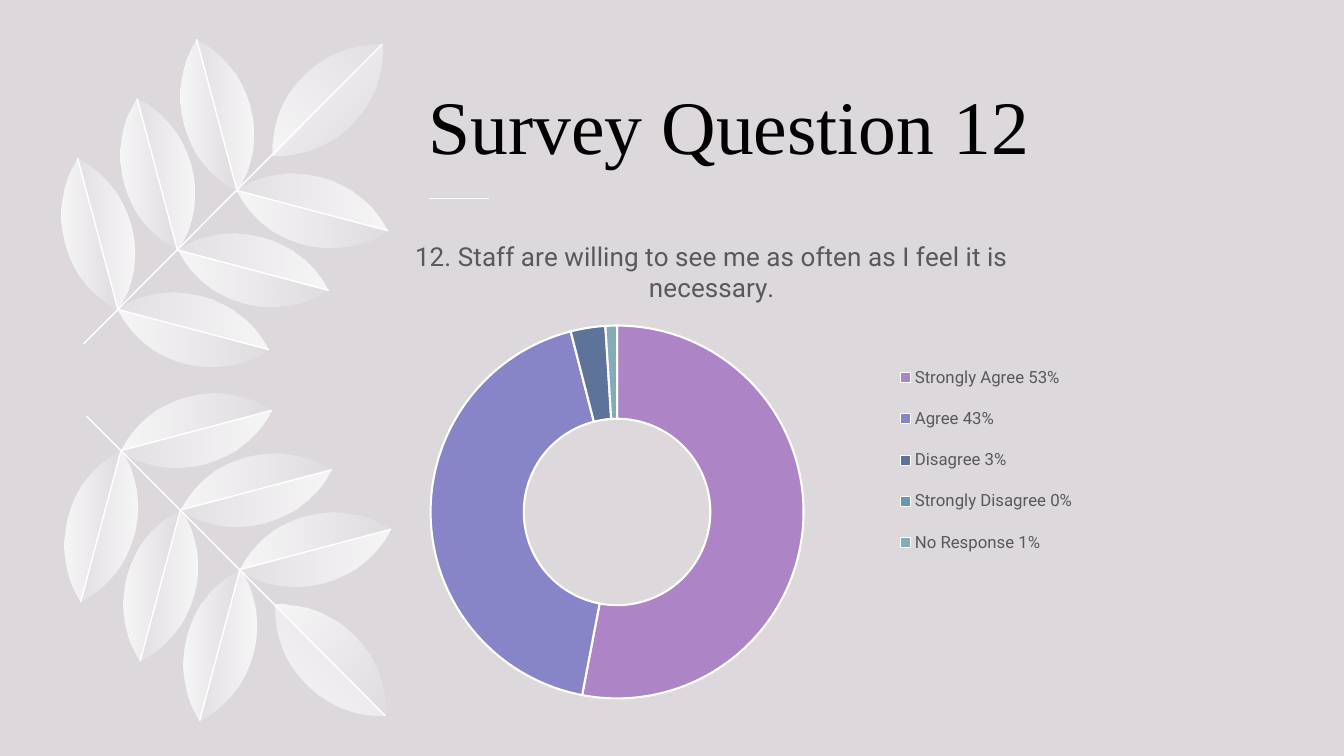
import dataclasses
import math
import typing

import lxml.etree
import pptx
import pptx.chart.data
import pptx.dml.color
import pptx.enum.chart
import pptx.enum.shapes
import pptx.enum.text
import pptx.oxml
import pptx.oxml.ns
import pptx.util

Point = tuple[float, float]
Inches = pptx.util.Inches

COLORS = {"back": "DCD8DC", "white": "FFFFFF", "title": "000000", "text": "595959"}
QUERY = "12. Staff are willing to see me as often as I feel it is necessary."


@dataclasses.dataclass
class Leaf:
    base: Point
    tip: Point
    solid: int  # side of the rib that fades most: 1 or -1
    angles: tuple[int, int]  # gradient angles of that side and the other


@dataclasses.dataclass
class Branch:
    turn: int  # rotation of the leaf shapes
    place: typing.Callable[[Point], Point]


@dataclasses.dataclass
class Slice:
    label: str
    value: int
    color: str


@dataclasses.dataclass
class Frame:
    x: float
    y: float
    w: float = 0
    h: float = 0


NODES = [(2.35 - 0.59 * i, 1.89 + 0.59 * i) for i in range(3)]
LEAVES = [Leaf((2.7, 1.54), (3.79, 0.44), 1, (45, 315))]
for x, y in NODES:
    LEAVES.append(Leaf((x, y), (x - 0.4, y - 1.5), -1, (0, 180)))
    LEAVES.append(Leaf((x, y), (x + 1.5, y + 0.4), 1, (0, 180)))
STEM = ((0.83, 3.41), (3.79, 0.44))
BRANCHES = [
    Branch(45, lambda p: p),
    Branch(-45, lambda p: (p[0] + 0.03, 7.54 - p[1])),
]
# Bezier points of half a leaf: distance along the rib and away from it
CURVE = [(0, 0), (0.19, 0.21), (0.46, 0.34), (0.77, 0.34), (1.08, 0.34),
         (1.36, 0.21), (1.55, 0), (0, 0), (0, 0), (0, 0)]
SLICES = [
    Slice("Strongly Agree 53%", 53, "AD84C6"),
    Slice("Agree 43%", 43, "8784C7"),
    Slice("Disagree 3%", 3, "5D739A"),
    Slice("Strongly Disagree 0%", 0, "6997AF"),
    Slice("No Response 1%", 1, "84ACB6"),
]
CHART = Frame(2.89, 2.18, 8.36, 4.88)


def rgb(code: str) -> pptx.dml.color.RGBColor:
    return pptx.dml.color.RGBColor.from_string(code)


def style(font, name: str, size: float, color: str) -> None:
    font.name, font.size, font.bold = name, pptx.util.Pt(size), False
    font.color.rgb = rgb(COLORS[color])


def rule(shapes, start: Point, end: Point) -> None:
    line = shapes.add_connector(
        pptx.enum.shapes.MSO_CONNECTOR.STRAIGHT, *map(Inches, start + end))
    line.line.color.rgb = rgb(COLORS["white"])
    line.line.width = pptx.util.Pt(1)
    props = line.element.spPr
    lxml.etree.SubElement(props, pptx.oxml.ns.qn("a:effectLst"))


def rotate(p: Point, turn: float) -> Point:
    c, s = math.cos(math.radians(turn)), math.sin(math.radians(turn))
    return p[0] * c - p[1] * s, p[0] * s + p[1] * c


def edge(leaf: Leaf, side: int) -> list[Point]:
    (x, y), (tx, ty) = leaf.base, leaf.tip
    size = math.dist(leaf.base, leaf.tip)
    ux, uy = (tx - x) / size, (ty - y) / size
    return [(x + a * ux - side * b * uy, y + a * uy + side * b * ux)
            for a, b in CURVE]


def bend(shape) -> None:
    # Join each three line ends into one Bezier curve
    lines = shape.element.xpath(".//a:lnTo")
    for i in range(0, len(lines), 3):
        curve = lxml.etree.Element(pptx.oxml.ns.qn("a:cubicBezTo"))
        lines[i].addprevious(curve)
        for line in lines[i:i + 3]:
            curve.append(line[0])
            line.getparent().remove(line)


def blade(shapes, points: list[Point], turn: int, angle: int, fade: int) -> None:
    # Lay the outline flat, then let the shape's rotation restore it
    flat = [rotate(p, -turn) for p in points]
    xs, ys = zip(*flat)
    mid = ((min(xs) + max(xs)) / 2, (min(ys) + max(ys)) / 2)
    goal = rotate(mid, turn)
    spots = [(Inches(x + goal[0] - mid[0]), Inches(y + goal[1] - mid[1]))
             for x, y in flat]
    form = shapes.build_freeform(*spots[0])
    form.add_line_segments(spots[1:], close=True)
    shape = form.convert_to_shape()
    bend(shape)
    shape.rotation = turn
    shape.line.fill.background()
    shape.shadow.inherit = False
    stops = "".join(
        f'<a:gs pos="{pos}"><a:srgbClr val="{COLORS["white"]}">'
        f'<a:alpha val="{alpha}000"/></a:srgbClr></a:gs>'
        for pos, alpha in ((0, 80), (100000, fade)))
    fill = pptx.oxml.parse_xml(
        f'<a:gradFill {pptx.oxml.ns.nsdecls("a")} rotWithShape="0">'
        f'<a:gsLst>{stops}</a:gsLst><a:lin ang="{angle * 60000}" scaled="0"/>'
        '</a:gradFill>')
    shape.element.spPr.insert(2, fill)


def grow(slide, branch: Branch) -> None:
    shapes = slide.shapes.add_group_shape().shapes
    for leaf in LEAVES:
        for side, angle, fade in zip((1, -1), leaf.angles, (10, 20)):
            points = map(branch.place, edge(leaf, side * leaf.solid))
            blade(shapes, list(points), branch.turn, angle, fade)
    for start, end in [STEM] + [(leaf.base, leaf.tip) for leaf in LEAVES[1:]]:
        rule(shapes, branch.place(start), branch.place(end))


def arrange(part, index: int, frame: Frame, inner: bool = False) -> None:
    for old in part.xpath("./c:layout"):
        part.remove(old)
    shares = {"x": (frame.x - CHART.x) / CHART.w, "y": (frame.y - CHART.y) / CHART.h,
              "w": frame.w / CHART.w, "h": frame.h / CHART.h}
    tags = '<c:layoutTarget val="inner"/>' if inner else ""
    tags += '<c:xMode val="edge"/><c:yMode val="edge"/>'
    tags += "".join(f'<c:{k} val="{v:.4f}"/>' for k, v in shares.items() if v)
    part.insert(index, pptx.oxml.parse_xml(
        f'<c:layout {pptx.oxml.ns.nsdecls("c")}>'
        f'<c:manualLayout>{tags}</c:manualLayout></c:layout>'))


def plot(slide) -> None:
    data = pptx.chart.data.CategoryChartData()
    data.categories = [s.label for s in SLICES]
    data.add_series(QUERY, [s.value for s in SLICES])
    chart = slide.shapes.add_chart(
        pptx.enum.chart.XL_CHART_TYPE.DOUGHNUT,
        *map(Inches, dataclasses.astuple(CHART)), data).chart
    style(chart.font, "Roboto", 10, "title")
    chart.has_title = chart.has_legend = True
    head = chart.chart_title.text_frame
    head.text = QUERY
    style(head.paragraphs[0].font, "Roboto", 18.6, "text")
    chart.legend.position = pptx.enum.chart.XL_LEGEND_POSITION.RIGHT
    chart.legend.include_in_layout = False
    style(chart.legend.font, "Roboto", 12, "text")
    chart.plots[0].vary_by_categories = True
    for i, part in enumerate(SLICES):
        look = chart.plots[0].series[0].points[i].format
        look.fill.solid()
        look.fill.fore_color.rgb = rgb(part.color)
        look.line.color.rgb = rgb(COLORS["white"])
        look.line.width = pptx.util.Pt(1.5)
    # Hole size and the places of title, ring and legend
    root = chart.element
    root.xpath(".//c:holeSize")[0].set("val", "75")
    arrange(root.xpath("./c:chart/c:title")[0], 1, Frame(4.07, 2.33))
    arrange(root.xpath(".//c:plotArea")[0], 0, Frame(4.27, 3.23, 3.7, 3.7), True)
    arrange(root.xpath(".//c:legend")[0], 1, Frame(8.7, 3.44, 2.17, 2.25))


def main() -> None:
    deck = pptx.Presentation()
    deck.slide_width, deck.slide_height = Inches(13.33), Inches(7.5)
    slide = deck.slides.add_slide(deck.slide_layouts[5])
    slide.background.fill.solid()
    slide.background.fill.fore_color.rgb = rgb(COLORS["back"])

    # Rule and leafy branches
    rule(slide.shapes, (4.25, 1.97), (4.85, 1.97))
    for branch in BRANCHES:
        grow(slide, branch)

    # Title
    title = slide.shapes.title
    title.left, title.top, title.width, title.height = map(
        Inches, (4.25, 0.43, 8.46, 1.3))
    frame = title.text_frame
    frame.text = "Survey Question 12"
    frame.margin_left = 0
    frame.vertical_anchor = pptx.enum.text.MSO_ANCHOR.BOTTOM
    frame.paragraphs[0].alignment = pptx.enum.text.PP_ALIGN.LEFT
    style(frame.paragraphs[0].font, "Times New Roman", 54, "title")

    plot(slide)
    deck.save("out.pptx")


if __name__ == "__main__":
    main()
